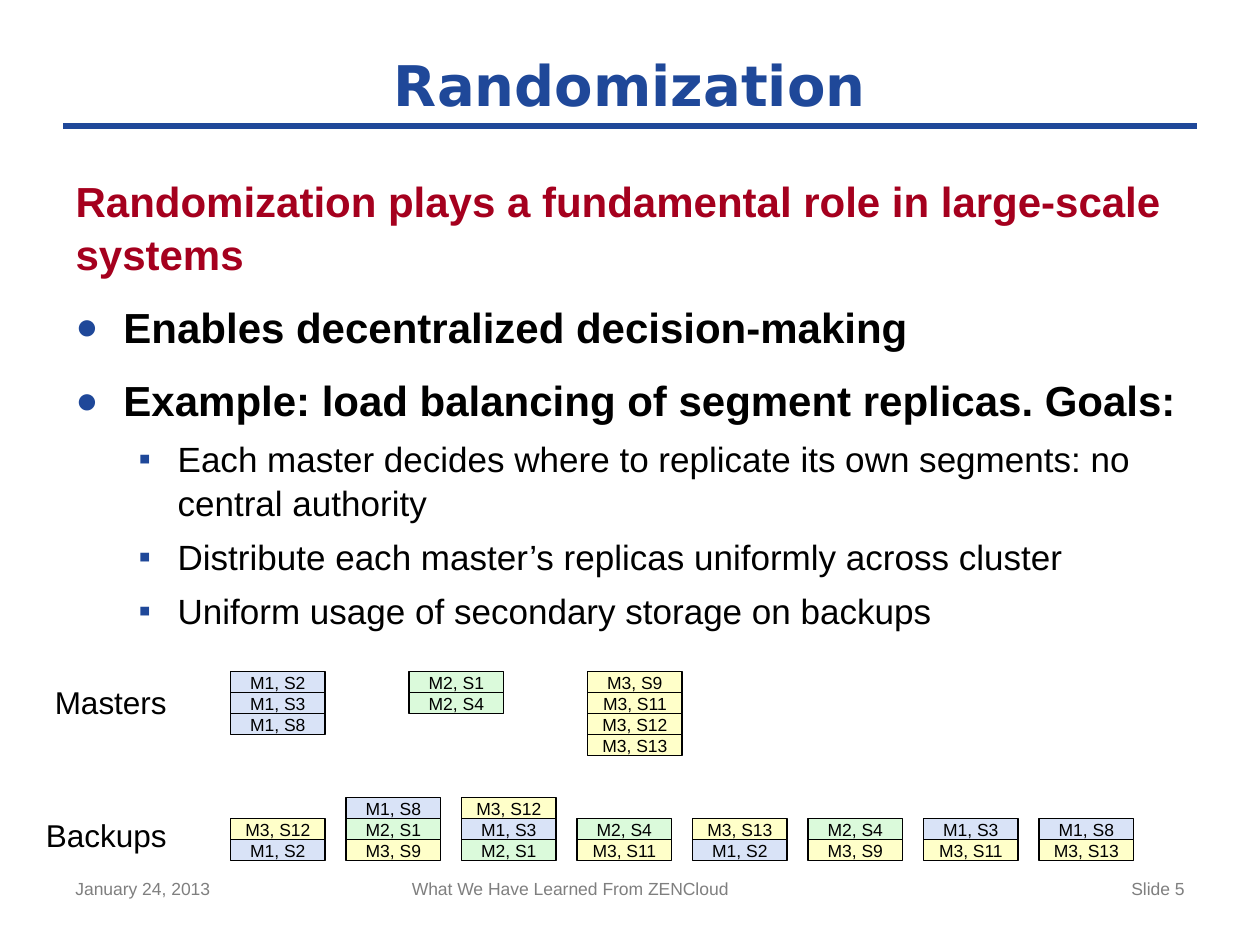
from dataclasses import dataclass

from lxml.etree import SubElement
from pptx import Presentation
from pptx.dml.color import RGBColor
from pptx.enum.shapes import MSO_CONNECTOR, MSO_SHAPE
from pptx.enum.text import MSO_ANCHOR, MSO_AUTO_SIZE, PP_ALIGN
from pptx.oxml.ns import qn
from pptx.util import Inches, Pt


@dataclass(frozen=True)
class Theme:
    blue: str = "1F4899"
    red: str = "A5001E"
    black: str = "000000"
    gray: str = "7F7F7F"
    title_font: str = "DejaVu Sans"
    text_font: str = "Arial"
    title_size: int = 32
    point_size: int = 24
    detail_size: int = 20
    label_size: int = 18
    small_size: int = 10


THEME = Theme()
MASTER_FILLS = {"M1": "D9E3F7", "M2": "DBFADB", "M3": "FFFFC9"}
BLOCK_WIDTH = Inches(0.75)
BLOCK_HEIGHT = Inches(1 / 6)

POINTS = [
    ("lead", "Randomization plays a fundamental role in large-scale systems"),
    ("point", "Enables decentralized decision-making"),
    ("point", "Example: load balancing of segment replicas. Goals:"),
    ("detail", "Each master decides where to replicate its own segments: no central authority"),
    ("detail", "Distribute each master’s replicas uniformly across cluster"),
    ("detail", "Uniform usage of secondary storage on backups"),
]
MASTERS = [
    ["M1, S2", "M1, S3", "M1, S8"],
    ["M2, S1", "M2, S4"],
    ["M3, S9", "M3, S11", "M3, S12", "M3, S13"],
]
BACKUPS = [
    ["M3, S12", "M1, S2"],
    ["M1, S8", "M2, S1", "M3, S9"],
    ["M3, S12", "M1, S3", "M2, S1"],
    ["M2, S4", "M3, S11"],
    ["M3, S13", "M1, S2"],
    ["M2, S4", "M3, S9"],
    ["M1, S3", "M3, S11"],
    ["M1, S8", "M3, S13"],
]


def write(para, text, size=THEME.small_size, color=THEME.black,
          font=THEME.text_font, bold=False, align=PP_ALIGN.LEFT):
    para.alignment = align
    span = para.add_run()
    span.text = text
    span.font.size = Pt(size)
    span.font.name = font
    span.font.bold = bold
    span.font.color.rgb = RGBColor.from_string(color)


def move(box, left, top, width, height):
    box.left, box.top, box.width, box.height = left, top, width, height


def set_bullet(para, symbol=None, percent=100, left=0, hanging=0):
    properties = para._p.get_or_add_pPr()
    properties.set("marL", str(left))
    properties.set("indent", str(-hanging))
    if symbol is None:
        SubElement(properties, qn("a:buNone"))
        return
    color = SubElement(properties, qn("a:buClr"))
    SubElement(color, qn("a:srgbClr"), val=THEME.blue)
    SubElement(properties, qn("a:buSzPct"), val=str(percent * 1000))
    SubElement(properties, qn("a:buFont"), typeface=THEME.text_font)
    SubElement(properties, qn("a:buChar"), char=symbol)


def add_title(page, left, top, width, height):
    box = page.shapes.title
    move(box, left, top, width, height)
    frame = box.text_frame
    frame.auto_size = MSO_AUTO_SIZE.NONE
    frame.vertical_anchor = MSO_ANCHOR.MIDDLE
    write(frame.paragraphs[0], "Randomization", size=THEME.title_size, color=THEME.blue,
          font=THEME.title_font, bold=True, align=PP_ALIGN.CENTER)
    bottom = top + height
    rule = page.shapes.add_connector(MSO_CONNECTOR.STRAIGHT, left, bottom, left + width, bottom)
    rule.line.color.rgb = RGBColor.from_string(THEME.blue)
    rule.line.width = Pt(4)
    SubElement(rule._element.spPr, qn("a:effectLst"))


def add_points(page, left, top, width, height):
    box = page.placeholders[1]
    move(box, left, top, width, height)
    frame = box.text_frame
    frame.auto_size = MSO_AUTO_SIZE.NONE
    for index, (kind, text) in enumerate(POINTS):
        para = frame.add_paragraph() if index else frame.paragraphs[0]
        detail = kind == "detail"
        para.level = 1 if detail else 0
        para.line_spacing = 1.04
        para.space_before = Pt(6 if detail else 12)
        write(para, text, size=THEME.detail_size if detail else THEME.point_size,
              color=THEME.red if kind == "lead" else THEME.black, bold=not detail)
        if kind == "lead":
            set_bullet(para)
        elif kind == "point":
            set_bullet(para, "●", percent=90, left=Inches(0.38), hanging=Inches(0.38))
        else:
            set_bullet(para, "▪", left=Inches(0.81), hanging=Inches(0.31))


def add_text(page, text, left, top, width, height, wrap=True, **style):
    box = page.shapes.add_textbox(left, top, width, height)
    box.text_frame.word_wrap = wrap
    write(box.text_frame.paragraphs[0], text, **style)


def add_block(page, text, left, top):
    box = page.shapes.add_shape(MSO_SHAPE.RECTANGLE, left, top, BLOCK_WIDTH, BLOCK_HEIGHT)
    box.shadow.inherit = False
    box.fill.solid()
    box.fill.fore_color.rgb = RGBColor.from_string(MASTER_FILLS[text[:2]])
    box.line.color.rgb = RGBColor.from_string(THEME.black)
    box.line.width = Pt(1)
    frame = box.text_frame
    frame.margin_left = frame.margin_right = frame.margin_top = frame.margin_bottom = 0
    frame.vertical_anchor = MSO_ANCHOR.MIDDLE
    write(frame.paragraphs[0], text, align=PP_ALIGN.CENTER)


def add_stacks(page, stacks, left, top, pitch, rows, from_bottom=False):
    for column, stack in enumerate(stacks):
        first_row = rows - len(stack) if from_bottom else 0
        for row, text in enumerate(stack, first_row):
            add_block(page, text, left + column * pitch, top + row * BLOCK_HEIGHT)


def add_replica_diagram(page, left, top):
    label = {"size": THEME.label_size, "align": PP_ALIGN.CENTER, "wrap": False}
    add_text(page, "Masters", left + Inches(0.07), top + Inches(0.04),
             Inches(1.1), Inches(0.4), **label)
    add_text(page, "Backups", left, top + Inches(1.1), Inches(1.17), Inches(0.4), **label)
    stack_left = left + Inches(1.57)
    add_stacks(page, MASTERS, stack_left, top, Inches(17 / 12), rows=4)
    add_stacks(page, BACKUPS, stack_left, top + Inches(1), Inches(11 / 12),
               rows=3, from_bottom=True)


def add_footer(page, left, top, width, height):
    side = Inches(2.33)
    add_text(page, "January 24, 2013", left, top, side, height, color=THEME.gray)
    add_text(page, "What We Have Learned From ZENCloud", left + Inches(2.67), top,
             Inches(3.75), height, color=THEME.gray)
    add_text(page, "Slide 5", left + width - side, top, side, height,
             color=THEME.gray, align=PP_ALIGN.RIGHT)


def main():
    deck = Presentation()
    deck.slide_width, deck.slide_height = Inches(10), Inches(7.5)
    page = deck.slides.add_slide(deck.slide_layouts[1])
    left, width = Inches(0.5), Inches(9)
    add_title(page, left, Inches(0.33), width, Inches(0.67))
    add_points(page, left, Inches(1.33), width, Inches(3.67))
    add_replica_diagram(page, Inches(0.26), Inches(5.33))
    add_footer(page, left, Inches(6.92), width, Inches(0.43))
    deck.save("out.pptx")


if __name__ == "__main__":
    main()
